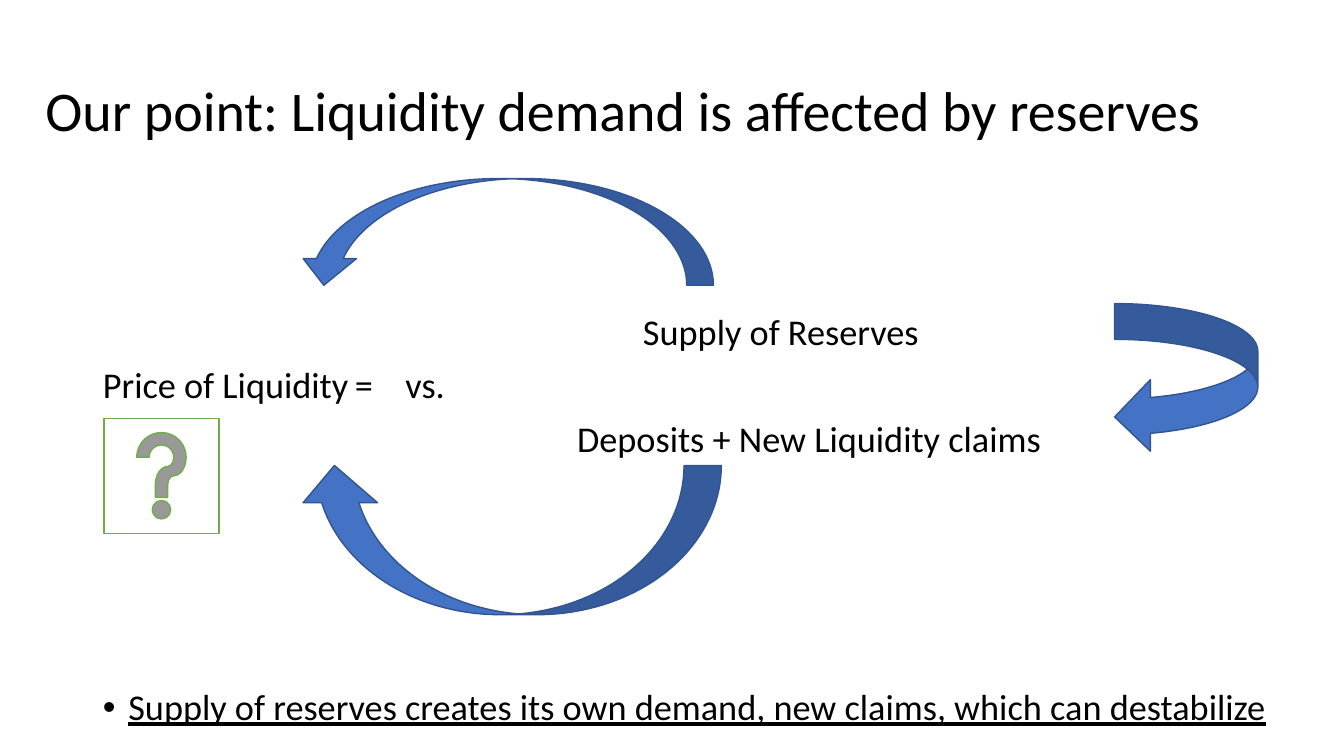
import dataclasses

import pptx
import pptx.dml.color
import pptx.enum.shapes
import pptx.enum.text
import pptx.oxml
import pptx.oxml.ns
import pptx.util

Cm = pptx.util.Cm
Pt = pptx.util.Pt
KIND = pptx.enum.shapes.MSO_SHAPE
TEXT = pptx.enum.text

HUES = {"ink": "000000", "blue": "4472C4", "navy": "325491",
        "white": "FFFFFF", "green": "70AD47"}
SIZE = 25.9


@dataclasses.dataclass
class Mark:
    kind: KIND
    box: tuple[float, float, float, float]
    fill: str = "blue"
    line: str = "navy"
    flip: bool = False


@dataclasses.dataclass
class Row:
    text: str
    left: float = 0
    hang: float = 0
    gap: float = 10
    tabs: tuple[float, ...] = ()
    point: bool = False


MARKS = [
    Mark(KIND.CURVED_UP_ARROW, (7.49, 11.73, 10.69, 3.76), flip=True),
    Mark(KIND.CURVED_LEFT_ARROW, (28.09, 7.65, 3.61, 3.76)),
    Mark(KIND.CURVED_DOWN_ARROW, (7.49, 4.5, 10.49, 2.69), flip=True),
    Mark(KIND.ACTION_BUTTON_HELP, (2.62, 10.54, 2.9, 2.9), "white", "green"),
]

ROWS = [
    Row("Supply of Reserves", left=13.61, gap=0),
    Row("Price of Liquidity\t=\tvs.", tabs=(8.24, 14.9)),
    Row("Deposits + New Liquidity claims", left=11.95),
    Row("Supply of reserves creates its own demand, new claims, "
        "which can destabilize\t",
        left=0.64, hang=-0.64, gap=163.8, tabs=(29.65,), point=True),
]


def tint(hue: str) -> pptx.dml.color.RGBColor:
    return pptx.dml.color.RGBColor.from_string(HUES[hue])


def apply(item: object, form: dict) -> None:
    for name, value in form.items():
        setattr(item, name, value)


def place(item: object, box: tuple[float, float, float, float]) -> None:
    apply(item, dict(zip(("left", "top", "width", "height"), map(Cm, box))))


def write(para: object, text: str, size: float, line: bool = False) -> None:
    run = para.add_run()
    run.text = text
    apply(run.font, {"name": "Calibri", "size": Pt(size), "underline": line})
    run.font.color.rgb = tint("ink")


def add_row(para: object, row: Row) -> None:
    apply(para, {"line_spacing": 0.9, "space_before": Pt(row.gap),
                 "space_after": Pt(0), "alignment": TEXT.PP_ALIGN.LEFT})
    write(para, row.text, SIZE, row.point)
    # Indents, bullet and tab stops
    props = para._p.get_or_add_pPr()
    props.set("marL", str(Cm(row.left)))
    props.set("indent", str(Cm(row.hang)))
    space = pptx.oxml.ns.nsdecls("a")
    dot = '<a:buChar {} char="•"/>' if row.point else "<a:buNone {}/>"
    props.append(pptx.oxml.parse_xml(dot.format(space)))
    if row.tabs:
        stops = "".join(f'<a:tab pos="{Cm(tab)}" algn="l"/>' for tab in row.tabs)
        props.append(pptx.oxml.parse_xml(f"<a:tabLst {space}>{stops}</a:tabLst>"))


def add_mark(slide: object, mark: Mark) -> None:
    shape = slide.shapes.add_shape(mark.kind, *map(Cm, mark.box))
    shape.shadow.inherit = False
    shape.fill.solid()
    shape.fill.fore_color.rgb = tint(mark.fill)
    shape.line.color.rgb = tint(mark.line)
    shape.line.width = Pt(1)
    if mark.flip:
        shape.element.spPr.find(pptx.oxml.ns.qn("a:xfrm")).set("flipH", "1")


def main() -> None:
    deck = pptx.Presentation()
    apply(deck, {"slide_width": Cm(33.87), "slide_height": Cm(19.05)})
    slide = deck.slides.add_slide(deck.slide_layouts[1])

    # Title
    title = slide.shapes.title
    place(title, (0.89, 1.02, 31.62, 3.68))
    apply(title.text_frame, {"vertical_anchor": TEXT.MSO_ANCHOR.MIDDLE,
                             "auto_size": TEXT.MSO_AUTO_SIZE.NONE,
                             "word_wrap": True})
    head = title.text_frame.paragraphs[0]
    apply(head, {"line_spacing": 0.9, "alignment": TEXT.PP_ALIGN.LEFT})
    write(head, "Our point: Liquidity demand is affected by reserves", 40)

    # Price equation and conclusion
    body = slide.placeholders[1]
    place(body, (2.34, 5.08, 30.89, 13.36))
    frame = body.text_frame
    apply(frame, {"margin_top": Cm(2.84), "word_wrap": True,
                  "vertical_anchor": TEXT.MSO_ANCHOR.TOP,
                  "auto_size": TEXT.MSO_AUTO_SIZE.NONE})
    for spot, row in enumerate(ROWS):
        add_row(frame.add_paragraph() if spot else frame.paragraphs[0], row)

    # Loop arrows and question button
    for mark in MARKS:
        add_mark(slide, mark)

    deck.save("out.pptx")


if __name__ == "__main__":
    main()
